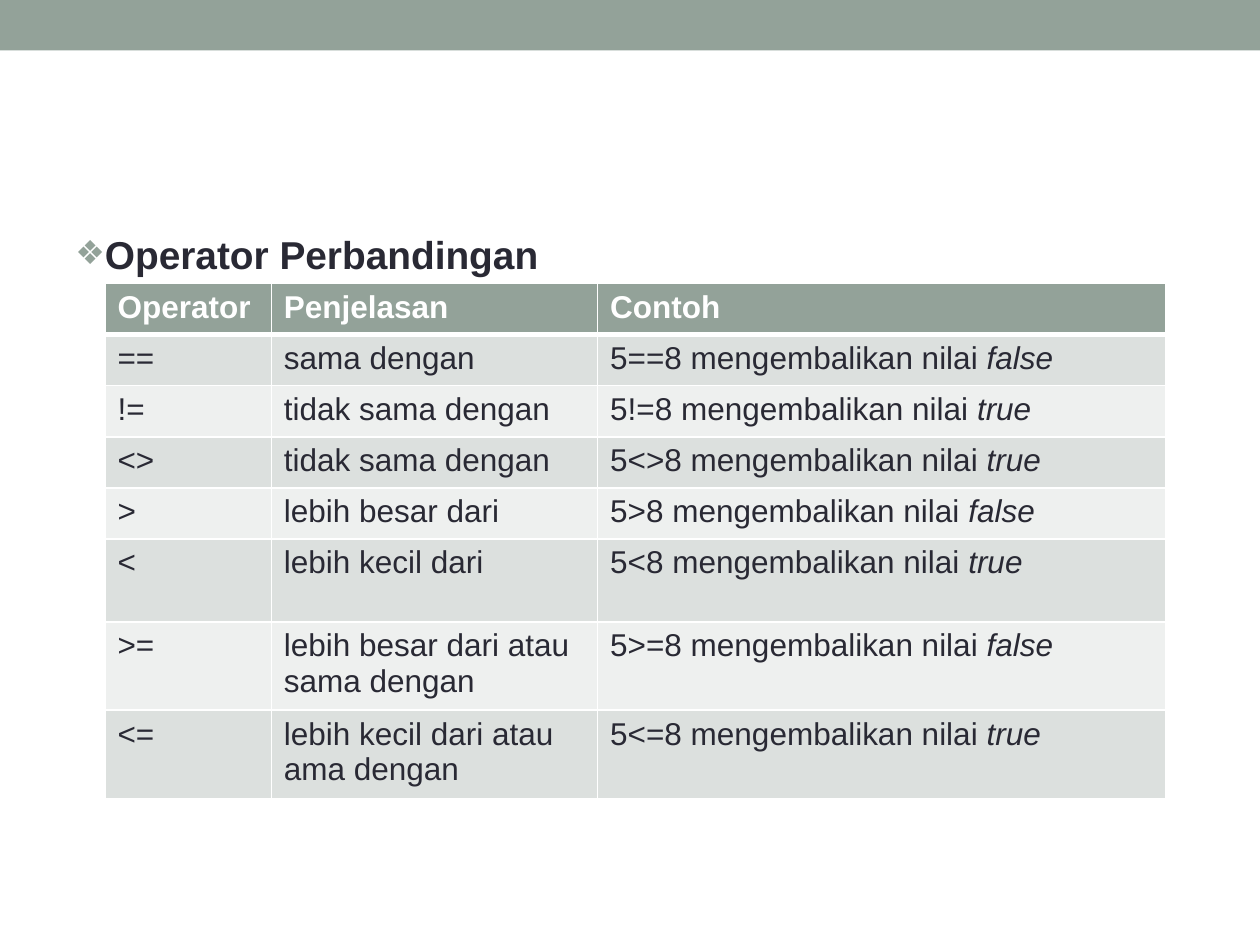
from pptx import Presentation
from pptx.dml.color import RGBColor
from pptx.enum.shapes import MSO_SHAPE
from pptx.oxml import parse_xml
from pptx.oxml.ns import nsdecls
from pptx.util import Pt

RECT = MSO_SHAPE.RECTANGLE
FONT = "Arial"
SAGE, INK, WHITE = "93A299", "292934", "FFFFFF"
BANDS = ["DCE0DE", "EEF0EF"]

TITLE = "Operator Perbandingan"
HEADS = ["Operator", "Penjelasan", "Contoh"]
ROWS = [
    ("==", "sama dengan", "false"),
    ("!=", "tidak sama dengan", "true"),
    ("<>", "tidak sama dengan", "true"),
    (">", "lebih besar dari", "false"),
    ("<", "lebih kecil dari", "true"),
    (">=", "lebih besar dari atau sama dengan", "false"),
    ("<=", "lebih kecil dari atau ama dengan", "true"),
]
WIDTHS = [95, 186.5, 324.5]
LOW, TALL = 29.2, 47.4
HEIGHTS = [LOW] * 5 + [TALL] * 3


def color(code):
    return RGBColor.from_string(code)


def style(run, size, code, bold=False, italic=False):
    font = run.font
    font.name, font.size = FONT, Pt(size)
    font.bold, font.italic = bold, italic
    font.color.rgb = color(code)


def border(cell, base):
    props = cell._tc.get_or_add_tcPr()
    for side, width in (("L", 1), ("R", 1), ("T", 1), ("B", base)):
        props.append(parse_xml(
            f'<a:ln{side} {nsdecls("a")} w="{Pt(width)}"><a:solidFill>'
            f'<a:srgbClr val="{WHITE}"/></a:solidFill></a:ln{side}>'))


def write(cell, parts, fill, code, bold=False, base=1):
    border(cell, base)
    cell.fill.solid()
    cell.fill.fore_color.rgb = color(fill)
    para = cell.text_frame.paragraphs[0]
    for i, part in enumerate(parts):
        run = para.add_run()
        run.text = part
        style(run, 18, code, bold, i > 0)


def add_bar(slide):
    bar = slide.shapes.add_shape(RECT, 0, 0, Pt(720), Pt(28.8))
    bar.shadow.inherit = False
    bar.fill.solid()
    bar.fill.fore_color.rgb = color(SAGE)
    bar.line.fill.background()


def add_title(slide):
    frame = slide.shapes.add_textbox(Pt(36), Pt(128), Pt(648), Pt(34)).text_frame
    frame.word_wrap = True
    frame.text = TITLE
    para = frame.paragraphs[0]
    props = para._p.get_or_add_pPr()
    props.set("marL", str(Pt(14.4)))
    props.set("indent", str(Pt(-14.4)))
    for tag in (f'buClr {nsdecls("a")}><a:srgbClr val="{SAGE}"/></a:buClr>',
                f'buSzPct {nsdecls("a")} val="85000"/>',
                f'buFont {nsdecls("a")} typeface="{FONT}"/>',
                f'buChar {nsdecls("a")} char="❖"/>'):
        props.append(parse_xml("<a:" + tag))
    style(para.runs[0], 22.2, INK, True)


def add_grid(slide):
    grid = slide.shapes.add_table(
        len(HEIGHTS), len(WIDTHS), Pt(60), Pt(162),
        Pt(sum(WIDTHS)), Pt(sum(HEIGHTS))).table
    for col, width in zip(grid.columns, WIDTHS):
        col.width = Pt(width)
    for row, height in zip(grid.rows, HEIGHTS):
        row.height = Pt(height)
    for c, head in enumerate(HEADS):
        write(grid.cell(0, c), [head], SAGE, WHITE, True, 3)
    for r, (sign, note, value) in enumerate(ROWS):
        sample = [f"5{sign}8 mengembalikan nilai ", value]
        for c, parts in enumerate(([sign], [note], sample)):
            write(grid.cell(r + 1, c), parts, BANDS[r % 2], INK)


def main():
    deck = Presentation()
    deck.slide_width, deck.slide_height = Pt(720), Pt(540)
    slide = deck.slides.add_slide(deck.slide_layouts[6])
    add_bar(slide)
    add_title(slide)
    add_grid(slide)
    deck.save("out.pptx")


if __name__ == "__main__":
    main()
